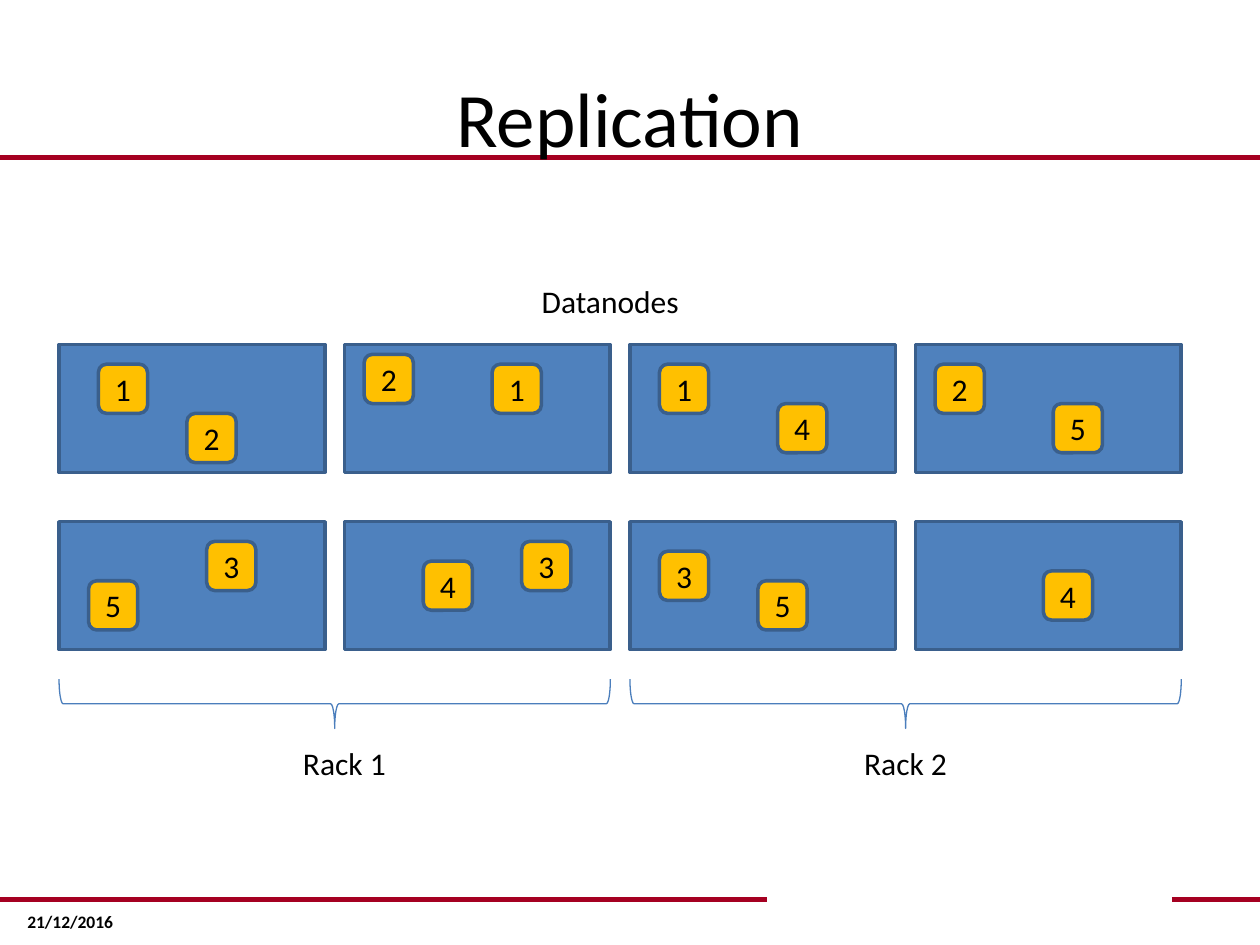
from lxml.etree import SubElement
from pptx import Presentation
from pptx.dml.color import RGBColor
from pptx.enum.shapes import MSO_CONNECTOR, MSO_SHAPE
from pptx.enum.text import MSO_ANCHOR, PP_ALIGN
from pptx.oxml.ns import qn
from pptx.util import Pt

# Content: each datanode lists its blocks as (number, column, row) in grid units
DATANODES = [
    [
        [("1", 4, 2), ("2", 13, 7)],
        [("2", 2, 1), ("1", 15, 2)],
        [("1", 3, 2), ("4", 15, 6)],
        [("2", 2, 2), ("5", 14, 6)],
    ],
    [
        [("5", 3, 6), ("3", 15, 2)],
        [("4", 8, 4), ("3", 18, 2)],
        [("3", 3, 3), ("5", 13, 6)],
        [("4", 13, 5)],
    ],
]
RACKS = [("Rack 1", 17), ("Rack 2", 74)]  # name, label column
RULES = [(0, 720, 90), (0, 438.5, 514), (669.6, 720, 514)]  # start, end, height


class Theme:
    font = "Calibri"
    text = RGBColor.from_string("000000")
    node = RGBColor.from_string("4F81BD")
    block = RGBColor.from_string("FFC000")
    outline = RGBColor.from_string("3A5F8C")
    brace = RGBColor.from_string("4B7EBC")
    rule = RGBColor.from_string("A50021")
    title_size, body_size, date_size = 44, 18, 10


# Grid: the slide is 128 units wide; sizes below are in units
UNIT = 720 / 128
NODE_LEFT, NODE_TOP = 6, 35
NODE_WIDTH, NODE_HEIGHT = 27, 13
COLUMN_STEP, ROW_STEP = 29, 18
BLOCK_SIZE = 5
BRACE_TOP, BRACE_DEPTH = 69, 5
BRACE_SPAN = COLUMN_STEP + NODE_WIDTH
LABEL_WIDTH, LABEL_HEIGHT = 36, 5


def on_grid(*units):
    return [Pt(unit * UNIT) for unit in units]


def write(shape, text, size=Theme.body_size, bold=False,
          align=PP_ALIGN.CENTER, anchor=MSO_ANCHOR.TOP):
    frame = shape.text_frame
    frame.word_wrap = True
    frame.vertical_anchor = anchor
    paragraph = frame.paragraphs[0]
    paragraph.alignment = align
    span = paragraph.add_run()
    span.text = text
    span.font.name = Theme.font
    span.font.size = Pt(size)
    span.font.bold = bold
    span.font.color.rgb = Theme.text


def add_shape(page, kind, area, fill=None, line=Theme.outline, width=2):
    shape = page.shapes.add_shape(kind, *area)
    shape.shadow.inherit = False
    if fill is None:
        shape.fill.background()
    else:
        shape.fill.solid()
        shape.fill.fore_color.rgb = fill
    shape.line.color.rgb = line
    shape.line.width = Pt(width)
    return shape


def add_rule(page, start, end, height):
    rule = page.shapes.add_connector(
        MSO_CONNECTOR.STRAIGHT, Pt(start), Pt(height), Pt(end), Pt(height))
    rule.line.color.rgb = Theme.rule
    rule.line.width = Pt(3)
    SubElement(rule._element.spPr, qn("a:effectLst"))


def add_label(page, text, left, top):
    box = page.shapes.add_textbox(*on_grid(left, top, LABEL_WIDTH, LABEL_HEIGHT))
    write(box, text)


def add_node(page, left, top, blocks):
    add_shape(page, MSO_SHAPE.RECTANGLE,
              on_grid(left, top, NODE_WIDTH, NODE_HEIGHT), Theme.node)
    for number, column, row in blocks:
        area = on_grid(left + column, top + row, BLOCK_SIZE, BLOCK_SIZE)
        block = add_shape(page, MSO_SHAPE.ROUNDED_RECTANGLE, area, Theme.block)
        write(block, number, anchor=MSO_ANCHOR.MIDDLE)


def add_rack(page, index, name, label_left):
    # The brace is laid out upright around its centre, then turned
    center_x = NODE_LEFT + index * 2 * COLUMN_STEP + BRACE_SPAN / 2
    center_y = BRACE_TOP + BRACE_DEPTH / 2
    area = on_grid(center_x - BRACE_DEPTH / 2, center_y - BRACE_SPAN / 2,
                   BRACE_DEPTH, BRACE_SPAN)
    brace = add_shape(page, MSO_SHAPE.LEFT_BRACE, area,
                      line=Theme.brace, width=0.75)
    brace.rotation = 270
    add_label(page, name, label_left, 75)


def main():
    deck = Presentation()
    deck.slide_width, deck.slide_height = Pt(720), Pt(540)
    page = deck.slides.add_slide(deck.slide_layouts[6])

    # Date, rules and title
    date = page.shapes.add_textbox(Pt(8.5), Pt(517), Pt(79), Pt(23))
    write(date, "21/12/2016", size=Theme.date_size, bold=True,
          align=PP_ALIGN.LEFT)
    for rule in RULES:
        add_rule(page, *rule)
    title = page.shapes.add_textbox(Pt(36), Pt(21.6), Pt(648), Pt(90))
    write(title, "Replication", size=Theme.title_size, anchor=MSO_ANCHOR.MIDDLE)

    # Datanodes with their blocks
    add_label(page, "Datanodes", 44, 28)
    for row, nodes in enumerate(DATANODES):
        for column, blocks in enumerate(nodes):
            add_node(page, NODE_LEFT + column * COLUMN_STEP,
                     NODE_TOP + row * ROW_STEP, blocks)

    # Racks
    for index, (name, label_left) in enumerate(RACKS):
        add_rack(page, index, name, label_left)

    deck.save("out.pptx")


if __name__ == "__main__":
    main()
